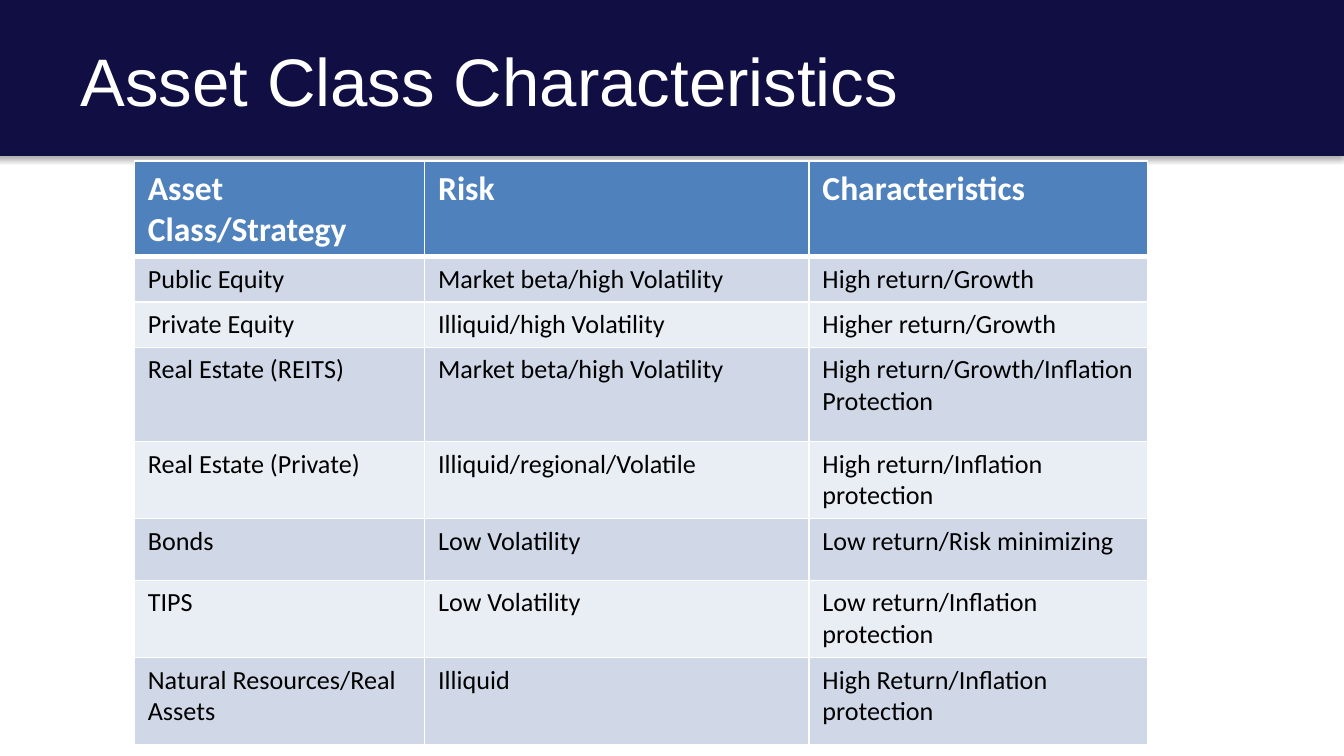
"""Build the asset class characteristics slide."""
from dataclasses import dataclass

from lxml import etree
from pptx import Presentation
from pptx.dml.color import RGBColor
from pptx.enum.shapes import MSO_SHAPE
from pptx.enum.text import MSO_ANCHOR, PP_ALIGN
from pptx.oxml.ns import qn
from pptx.util import Inches, Pt

RECTANGLE = MSO_SHAPE.RECTANGLE
LEFT = PP_ALIGN.LEFT
TOP = MSO_ANCHOR.TOP
TITLE_ONLY = 5

WIDTH = 10
HEIGHT = WIDTH * 9 / 16
COLUMNS = [2.16, 2.86, 2.52]
ROWS = [0.57, 0.27, 0.27, 0.7, 0.46, 0.46, 0.46, 0.65]
ASSET_CLASSES = [
    ("Asset Class/Strategy", "Risk", "Characteristics"),
    ("Public Equity", "Market beta/high Volatility", "High return/Growth"),
    ("Private Equity", "Illiquid/high Volatility", "Higher return/Growth"),
    ("Real Estate (REITS)", "Market beta/high Volatility", "High return/Growth/Inflation Protection"),
    ("Real Estate (Private)", "Illiquid/regional/Volatile", "High return/Inflation protection"),
    ("Bonds", "Low Volatility", "Low return/Risk minimizing"),
    ("TIPS", "Low Volatility", "Low return/Inflation protection"),
    ("Natural Resources/Real Assets", "Illiquid", "High Return/Inflation protection"),
]


@dataclass(frozen=True)
class Theme:
    """Colours, fonts and type sizes of the slide."""
    band: str = "100E42"
    header: str = "4F81BD"
    stripes: tuple = ("D0D8E8", "E9EDF4")
    light: str = "FFFFFF"
    dark: str = "000000"
    title_font: str = "Arial"
    body_font: str = "Calibri"
    title_size: int = 36
    header_size: int = 18
    body_size: int = 14
    rule: int = 1
    header_rule: int = 3


def write(frame, text, *, font, size, color, bold=False, spacing=None):
    """Put one formatted paragraph into a text frame."""
    frame.text = text
    paragraph = frame.paragraphs[0]
    paragraph.alignment = LEFT
    paragraph.line_spacing = spacing
    style = paragraph.runs[0].font
    style.name, style.size, style.bold = font, Pt(size), bold
    style.color.rgb = RGBColor.from_string(color)


def fill(target, color):
    """Give a shape or cell a solid fill."""
    target.fill.solid()
    target.fill.fore_color.rgb = RGBColor.from_string(color)


def outline(cell, color, **widths):
    """Draw the borders of a cell, given by side, ahead of its fill."""
    properties = cell._tc.get_or_add_tcPr()
    for position, (side, width) in enumerate(widths.items()):
        line = etree.Element(qn(f"a:ln{side}"), w=str(Pt(width)))
        paint = etree.SubElement(line, qn("a:solidFill"))
        etree.SubElement(paint, qn("a:srgbClr"), val=color)
        properties.insert(position, line)


class SlideBuilder:
    """Draw themed elements on the current slide."""

    def __init__(self, slide, theme):
        """Keep the slide and its theme."""
        self.slide, self.theme = slide, theme

    def title(self, text, left, top, width, height):
        """Place and format the title placeholder."""
        heading = self.slide.shapes.title
        heading.left, heading.top = Inches(left), Inches(top)
        heading.width, heading.height = Inches(width), Inches(height)
        heading.text_frame.vertical_anchor = TOP
        write(heading.text_frame, text, font=self.theme.title_font,
              size=self.theme.title_size, color=self.theme.light, spacing=0.9)

    def band(self, left, top, width, height):
        """Draw the shadowed band behind the title."""
        band = self.slide.shapes.add_shape(
            RECTANGLE, *map(Inches, (left, top, width, height)))
        fill(band, self.theme.band)
        band.line.fill.background()
        band.shadow.inherit = False
        effects = band.element.spPr.find(qn("a:effectLst"))
        shadow = etree.SubElement(
            effects, qn("a:outerShdw"), blurRad=str(Pt(3.1)), dist=str(Pt(1.8)),
            dir="5400000", rotWithShape="0")
        tint = etree.SubElement(shadow, qn("a:srgbClr"), val=self.theme.dark)
        etree.SubElement(tint, qn("a:alpha"), val="35000")
        self.slide.shapes.title.element.addprevious(band.element)

    def table(self, records, left, top, columns, rows):
        """Add a table with a header row and striped body rows."""
        theme = self.theme
        grid = self.slide.shapes.add_table(
            len(rows), len(columns), Inches(left), Inches(top),
            Inches(sum(columns)), Inches(sum(rows))).table
        for column, width in zip(grid.columns, columns):
            column.width = Inches(width)
        for index, (row, height, record) in enumerate(zip(grid.rows, rows, records)):
            row.height = Inches(height)
            header = index == 0
            above = theme.header_rule if index == 1 else theme.rule
            below = theme.header_rule if header else theme.rule
            for cell, text in zip(row.cells, record):
                fill(cell, theme.header if header else theme.stripes[(index - 1) % 2])
                outline(cell, theme.light, L=theme.rule, R=theme.rule, T=above, B=below)
                write(cell.text_frame, text, font=theme.body_font, bold=header,
                      size=theme.header_size if header else theme.body_size,
                      color=theme.light if header else theme.dark)


def main():
    """Assemble and save the slide."""
    deck = Presentation()
    deck.slide_width, deck.slide_height = Inches(WIDTH), Inches(HEIGHT)
    slide = deck.slides.add_slide(deck.slide_layouts[TITLE_ONLY])
    builder = SlideBuilder(slide, Theme())
    builder.band(-0.04, 0, WIDTH + 0.04, 1.16)
    builder.title("Asset Class Characteristics", WIDTH * 0.05, 0.31, WIDTH * 0.9, 0.85)
    builder.table(ASSET_CLASSES, WIDTH * 0.1, 1.2, COLUMNS, ROWS)
    deck.save("out.pptx")


if __name__ == "__main__":
    main()
